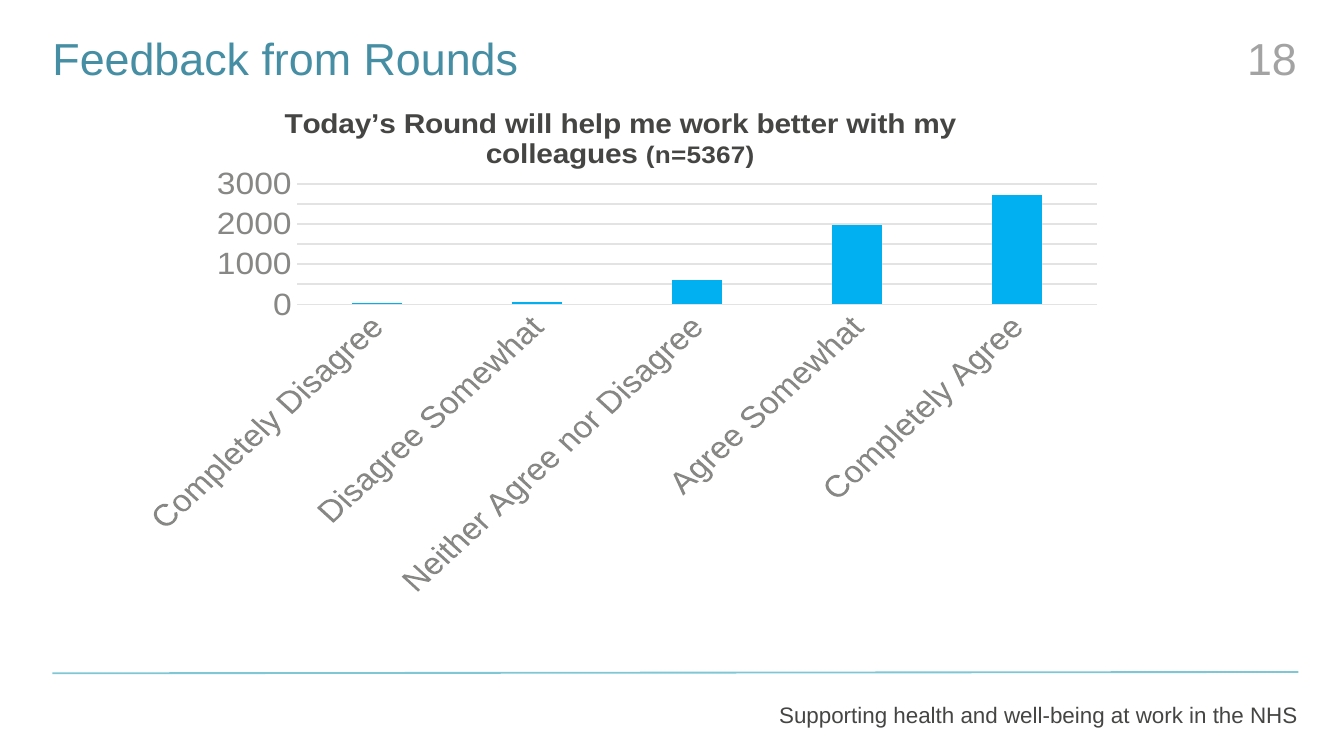
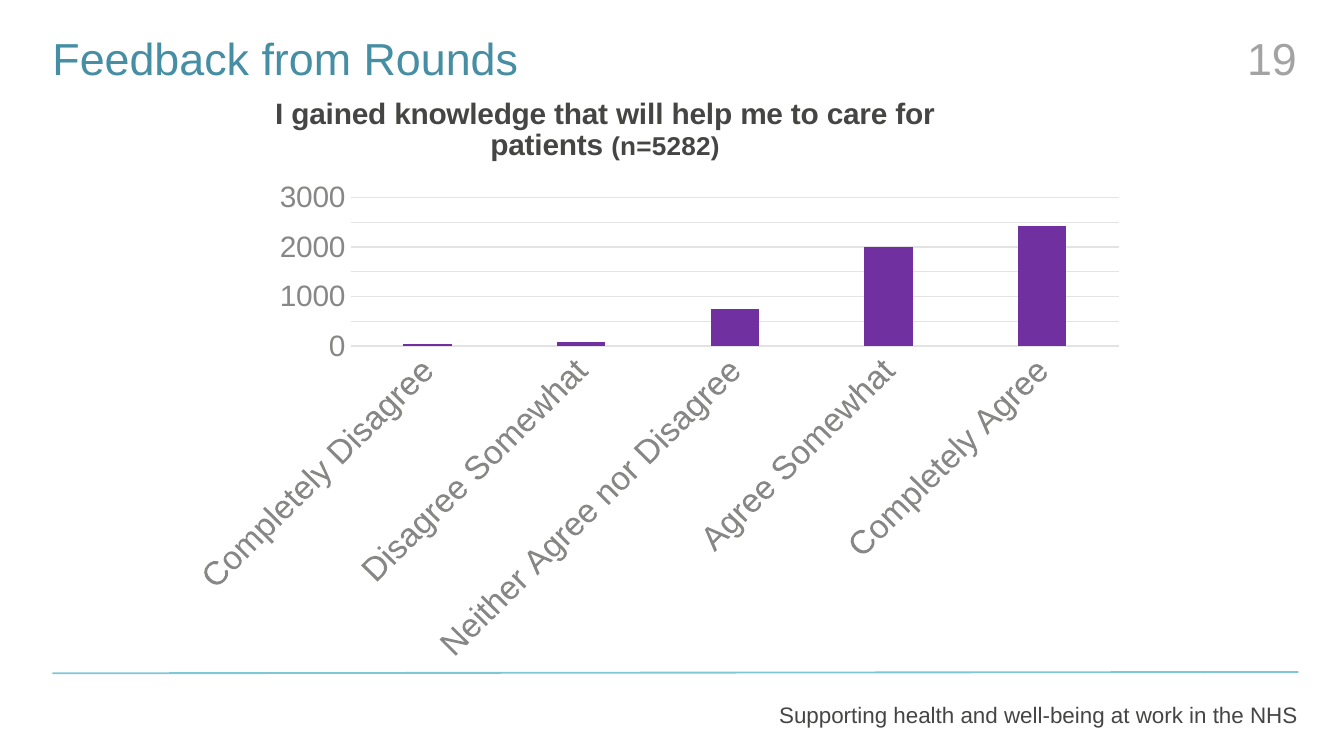
import pptx
import pptx.chart.data
import pptx.dml.color
import pptx.enum.chart
import pptx.enum.shapes
import pptx.enum.text
import pptx.oxml
import pptx.oxml.ns
import pptx.util

Inches = pptx.util.Inches
Pt = pptx.util.Pt
qn = pptx.oxml.ns.qn
FONT = "Arial"
COLORS = {
    "title": "458EA3", "page": "A3A3A3", "text": "454544", "rule": "80C7D6",
    "axis": "878785", "grid": "E3E3E3", "blue": "00B0F0", "purple": "7030A0",
}
ANSWERS = ["Completely Disagree", "Disagree Somewhat", "Neither Agree nor Disagree",
           "Agree Somewhat", "Completely Agree"]
CHARTS = [
    {"page": 18, "box": (0.92, 0.65, 7.39, 3.8), "color": "blue", "size": 18,
     "title": "Today’s Round will help me work better with my colleagues ",
     "count": "(n=5367)", "values": [20, 60, 610, 1970, 2710], "head": None},
    {"page": 19, "box": (1.3, 0.68, 7.17, 4.25), "color": "purple", "size": 16,
     "title": "I gained knowledge that will help me to care for patients ",
     "count": "(n=5282)", "values": [30, 80, 740, 2000, 2430],
     "head": {"x": 0.1, "y": 0}},
]


def rgb(name):
    return pptx.dml.color.RGBColor.from_string(COLORS[name])


def style(font, size, color, bold=False):
    for key, value in {"name": FONT, "size": Pt(size), "bold": bold}.items():
        setattr(font, key, value)
    font.color.rgb = rgb(color)


def place(title, marks):
    """Set the corner of a chart title, as fractions of the chart."""
    for old in title.findall(qn("c:layout")):
        title.remove(old)
    modes = "".join(f'<c:{key}Mode val="edge"/>' for key in marks)
    spots = "".join(f'<c:{key} val="{value}"/>' for key, value in marks.items())
    title.insert(1, pptx.oxml.parse_xml(
        f'<c:layout {pptx.oxml.ns.nsdecls("c")}><c:manualLayout>'
        f'{modes}{spots}</c:manualLayout></c:layout>'))


class Deck:
    def __init__(self):
        self.file = pptx.Presentation()
        self.file.slide_width = Inches(10)
        self.file.slide_height = Inches(10) * 9 // 16
        self.slide = None

    def start(self, title, page):
        """Add a slide with the shared title, page number, rule and footer."""
        self.slide = self.file.slides.add_slide(self.file.slide_layouts[6])
        self.rule((0.39, 5.01), (9.66, 5))
        self.text(title, (0.39, 0.23, 8.69, 0.94), 24, "title")
        self.text(str(page), (9.08, 0.23, 0.57, 0.39), 24, "page", right=True)
        self.text("Supporting health and well-being at work in the NHS",
                  (3.42, 5.17, 6.24, 0.27), 12, "text", right=True, pad=0.05)

    def rule(self, start, end):
        line = self.slide.shapes.add_connector(
            pptx.enum.shapes.MSO_CONNECTOR.STRAIGHT, *map(Inches, start + end))
        line.line.color.rgb = rgb("rule")
        line.line.width = Pt(1)
        line._element.spPr.append(pptx.oxml.parse_xml(
            f'<a:effectLst {pptx.oxml.ns.nsdecls("a")}/>'))

    def text(self, words, box, size, color, right=False, pad=0):
        frame = self.slide.shapes.add_textbox(*map(Inches, box)).text_frame
        form = {"word_wrap": True, "margin_left": 0, "margin_right": 0,
                "margin_top": Inches(pad), "margin_bottom": Inches(pad)}
        for key, value in form.items():
            setattr(frame, key, value)
        para = frame.paragraphs[0]
        align = pptx.enum.text.PP_ALIGN
        para.alignment = align.RIGHT if right else align.LEFT
        run = para.add_run()
        run.text = words
        style(run.font, size, color)

    def chart(self, item):
        data = pptx.chart.data.CategoryChartData()
        data.categories = ANSWERS
        data.add_series("Series 1", item["values"])
        chart = self.slide.shapes.add_chart(
            pptx.enum.chart.XL_CHART_TYPE.COLUMN_CLUSTERED,
            *map(Inches, item["box"]), data).chart
        style(chart.font, 10, "text")
        chart.has_legend = False
        plot = chart.plots[0]
        for key, value in {"gap_width": 219, "overlap": -27,
                           "vary_by_categories": False}.items():
            setattr(plot, key, value)
        fill = plot.series[0].format.fill
        fill.solid()
        fill.fore_color.rgb = rgb(item["color"])
        self.head(chart, item)
        self.axes(chart, item["size"])

    def head(self, chart, item):
        title = chart.chart_title
        para = title.text_frame.paragraphs[0]
        para.alignment = pptx.enum.text.PP_ALIGN.CENTER
        for words, size in ((item["title"], 16), (item["count"], 14)):
            run = para.add_run()
            run.text = words
            style(run.font, size, "text", bold=True)
        title.include_in_layout = False
        if item["head"]:
            place(title._element, item["head"])

    def axes(self, chart, size):
        cats, vals = chart.category_axis, chart.value_axis
        none = pptx.enum.chart.XL_TICK_MARK.NONE
        for axis, points in ((cats, 18), (vals, size)):
            axis.major_tick_mark = axis.minor_tick_mark = none
            style(axis.tick_labels.font, points, "axis")
        for key, value in {"minimum_scale": 0, "maximum_scale": 3000, "major_unit": 500,
                           "has_major_gridlines": True}.items():
            setattr(vals, key, value)
        vals.format.line.fill.background()
        for line in (cats.format.line, vals.major_gridlines.format.line):
            line.color.rgb = rgb("grid")
            line.width = Pt(0.75)
        body = cats._element.find(qn("c:txPr")).find(qn("a:bodyPr"))
        body.set("rot", "-2700000")
        body.set("vert", "horz")


def main():
    deck = Deck()
    for item in CHARTS:
        deck.start("Feedback from Rounds", item["page"])
        deck.chart(item)
    deck.file.save("out.pptx")


if __name__ == "__main__":
    main()
